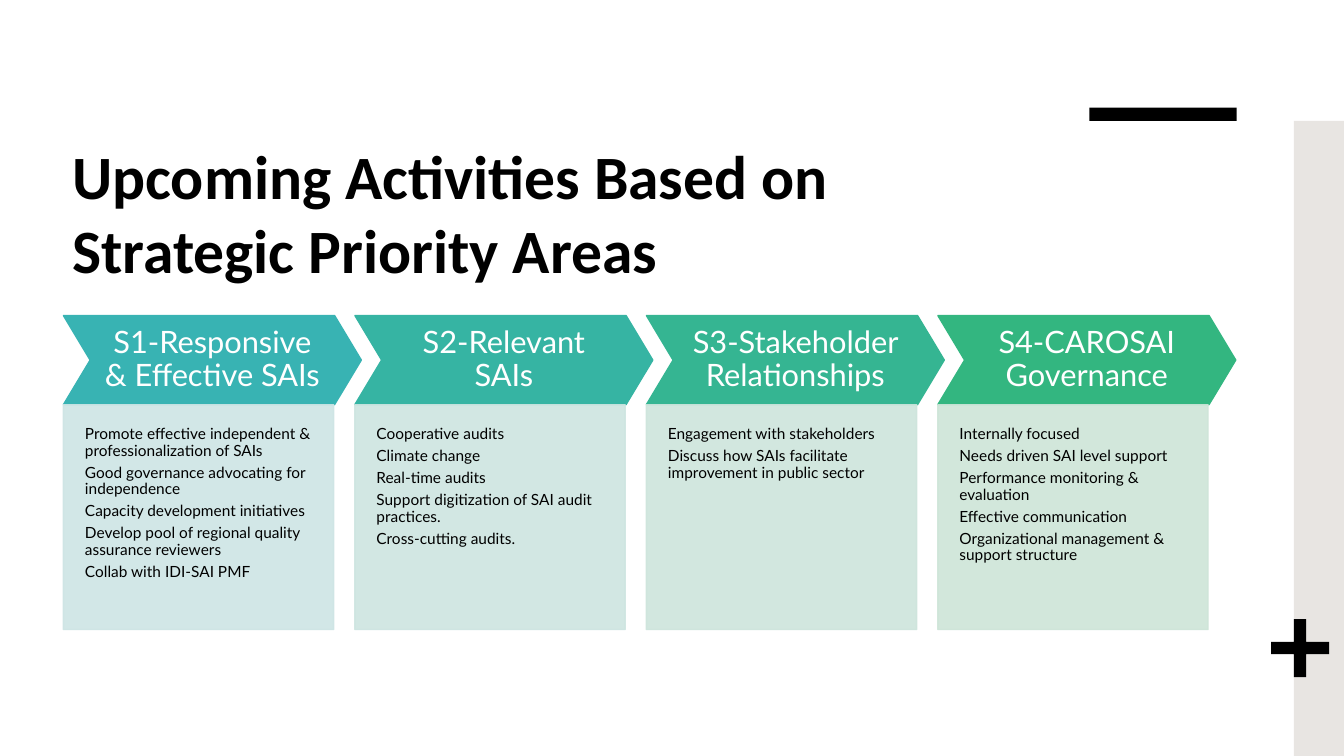
from dataclasses import dataclass

from lxml.etree import SubElement
from pptx import Presentation
from pptx.dml.color import RGBColor
from pptx.enum.shapes import MSO_SHAPE
from pptx.enum.text import MSO_ANCHOR, PP_ALIGN
from pptx.oxml.ns import qn
from pptx.util import Pt

COLORS = {"black": "000000", "white": "FFFFFF", "band": "E8E5E2"}
LEFT, STEP = 45.3, 208.2
HEAD_TOP, HEAD_W, HEAD_H = 225.4, 212.8, 63.6
BODY_TOP, BODY_W, BODY_H = 289.1, 193, 160.6

TITLE = {"name": "Calibri", "size": Pt(44), "bold": True}
HEAD = {"name": "Lato", "size": Pt(22)}
BODY = {"name": "Lato", "size": Pt(11)}


@dataclass
class Priority:
    heading: str
    head_color: str
    body_color: str
    activities: list[str]


@dataclass
class Decor:
    kind: MSO_SHAPE
    box: tuple
    color: str
    adj: float | None = None


DECOR = [
    Decor(MSO_SHAPE.RECTANGLE, (924.2, 86.4, 35.8, 453.6), COLORS["band"]),
    Decor(MSO_SHAPE.RECTANGLE, (778.2, 76.9, 105.1, 9.5), COLORS["black"]),
    Decor(MSO_SHAPE.CROSS, (907.9, 442.2, 41.4, 41.4), COLORS["black"], 0.395),
]

PRIORITIES = [
    Priority("S1-Responsive & Effective SAIs", "38B3B3", "CEE5E5", [
        "Promote effective independent & professionalization of SAIs",
        "Good governance advocating for independence",
        "Capacity development initiatives",
        "Develop pool of regional quality assurance reviewers",
        "Collab with IDI-SAI PMF",
    ]),
    Priority("S2-Relevant SAIs", "36B4A3", "CEE5E1", [
        "Cooperative audits",
        "Climate change",
        "Real-time audits",
        "Support digitization of SAI audit practices.",
        "Cross-cutting audits.",
    ]),
    Priority("S3-Stakeholder Relationships", "35B592", "CEE5DC", [
        "Engagement with stakeholders",
        "Discuss how SAIs facilitate improvement in public sector",
    ]),
    Priority("S4-CAROSAI Governance", "33B680", "CEE5D8", [
        "Internally focused",
        "Needs driven SAI level support",
        "Performance monitoring & evaluation",
        "Effective communication",
        "Organizational management & support structure",
    ]),
]


def add_block(s, kind, box, color: str, adj: float | None = None, outlined: bool = False):
    sp = s.shapes.add_shape(kind, *map(Pt, box))
    sp.shadow.inherit = False
    sp.fill.solid()
    sp.fill.fore_color.rgb = RGBColor.from_string(color)
    if outlined:
        sp.line.width = Pt(1)
        sp.line.color.rgb = RGBColor.from_string(color)
    else:
        sp.line.fill.background()
    if adj is not None:
        sp.adjustments[0] = adj
    return sp


def set_opacity(sp, percent: int) -> None:
    """Apply the same opacity to the fill and the outline."""
    for clr in sp._element.spPr.iter(qn("a:srgbClr")):
        SubElement(clr, qn("a:alpha"), val=str(percent * 1000))


def write(sp, lines: list[str], font: dict, color: str, para: dict, frame: dict) -> None:
    tf = sp.text_frame
    tf.word_wrap = True
    for key, value in frame.items():
        setattr(tf, key, value)
    for i, line in enumerate(lines):
        p = tf.add_paragraph() if i else tf.paragraphs[0]
        for key, value in para.items():
            setattr(p, key, value)
        r = p.add_run()
        r.text = line
        for key, value in font.items():
            setattr(r.font, key, value)
        r.font.color.rgb = RGBColor.from_string(color)


def margins(left: float, top: float, right: float, bottom: float) -> dict:
    return {"margin_left": Pt(left), "margin_top": Pt(top),
            "margin_right": Pt(right), "margin_bottom": Pt(bottom)}


def add_priority(s, item: Priority, x: float) -> None:
    head = add_block(s, MSO_SHAPE.CHEVRON, (x, HEAD_TOP, HEAD_W, HEAD_H),
                     item.head_color, 0.3, outlined=True)
    write(head, [item.heading], HEAD, COLORS["white"],
          {"alignment": PP_ALIGN.CENTER, "line_spacing": 0.9},
          {"vertical_anchor": MSO_ANCHOR.MIDDLE, **margins(8, 8, 8, 8)})
    body = add_block(s, MSO_SHAPE.RECTANGLE, (x, BODY_TOP, BODY_W, BODY_H),
                     item.body_color, outlined=True)
    set_opacity(body, 90)
    write(body, item.activities, BODY, COLORS["black"],
          {"alignment": PP_ALIGN.LEFT, "line_spacing": 0.9, "space_after": Pt(3.85)},
          {"vertical_anchor": MSO_ANCHOR.TOP, **margins(15.4, 15.4, 15.4, 30)})


def main() -> None:
    prs = Presentation()
    prs.slide_width, prs.slide_height = Pt(960), Pt(540)
    s = prs.slides.add_slide(prs.slide_layouts[6])
    for d in DECOR:
        add_block(s, d.kind, d.box, d.color, d.adj)
    title = s.shapes.add_textbox(*map(Pt, (44.6, 95, 650.9, 113.8)))
    write(title, ["Upcoming Activities Based on Strategic Priority Areas"],
          TITLE, COLORS["black"], {}, {})
    for i, item in enumerate(PRIORITIES):
        add_priority(s, item, LEFT + i * STEP)
    prs.save("out.pptx")


if __name__ == "__main__":
    main()
